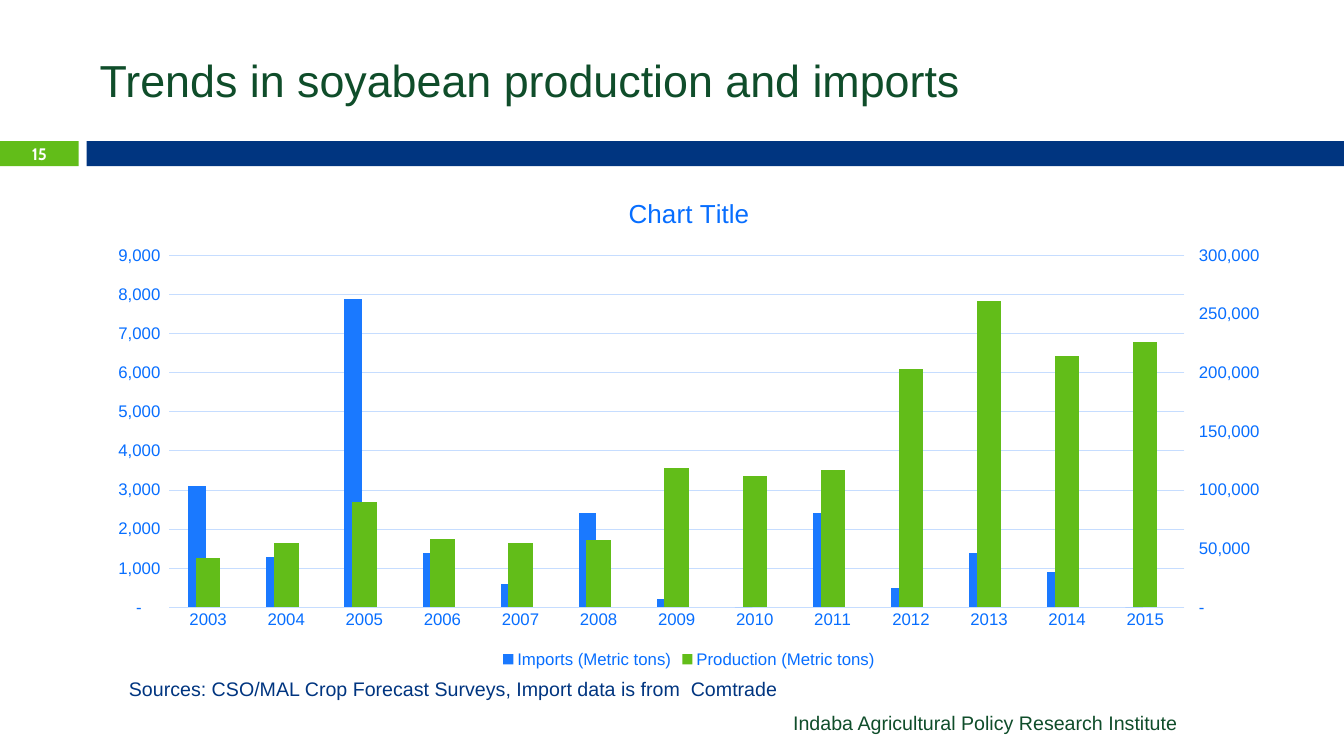
from copy import deepcopy
from lxml.etree import SubElement as Sub
from pptx import Presentation
from pptx.chart.data import CategoryChartData as Data
from pptx.dml.color import RGBColor as Rgb
from pptx.enum.chart import XL_CHART_TYPE as Kind, XL_LEGEND_POSITION as Spot, XL_TICK_MARK as Tick
from pptx.enum.shapes import MSO_SHAPE as Form
from pptx.enum.text import MSO_ANCHOR as Anchor, MSO_AUTO_SIZE as Auto, PP_ALIGN as Align
from pptx.oxml.ns import qn
from pptx.util import Inches, Pt

WIDE, HIGH = Inches(13.333), Inches(7.5)
HUES = {"green": "62BD19", "navy": "003580", "forest": "0F4D2A", "white": "FFFFFF",
        "blue": "1A79FF", "label": "076EFF", "grid": "C6DDFF", "sage": "A5AB81"}
YEARS = [str(year) for year in range(2003, 2016)]
SERIES = {
    "Imports (Metric tons)": ("blue", [3100, 1300, 7900, 1400, 600, 2400, 200, 0, 2400, 500, 1400, 900, 0]),
    "Series 2": ("sage", [None] * len(YEARS)),
    "Production (Metric tons)": ("green", [42000, 55000, 90000, 58000, 55000, 57000, 119000,
                                           112000, 117000, 203000, 261000, 214000, 226000]),
}
COUNT = '_(* #,##0_);_(* \\(#,##0\\);_(* "-"??_);_('


def place(x, y, w, h):
    """Turn percentages of the slide into lengths."""
    return [int(side * part / 100) for side, part in zip((WIDE, HIGH, WIDE, HIGH), (x, y, w, h))]


def apply(item, **traits):
    """Set each trait on the item."""
    for name, value in traits.items():
        setattr(item, name, value)


def ink(font, hue, size, face="Arial", bold=False):
    """Style a font."""
    apply(font, name=face, size=Pt(size), bold=bold)
    font.color.rgb = Rgb.from_string(HUES[hue])


def paint(fill, hue):
    """Give a fill one solid colour."""
    fill.solid()
    fill.fore_color.rgb = Rgb.from_string(HUES[hue])


def bar(slide, hue, *area):
    """Draw a plain band."""
    band = slide.shapes.add_shape(Form.RECTANGLE, *place(*area))
    band.shadow.inherit = False
    paint(band.fill, hue)
    band.line.fill.background()


def write(slide, text, area, font, align=Align.LEFT, **frame):
    """Add a line of text."""
    body = slide.shapes.add_textbox(*place(*area)).text_frame
    apply(body, word_wrap=True, **frame)
    line = body.paragraphs[0]
    apply(line, text=text, alignment=align)
    ink(line.runs[0].font, *font)


def rule(line):
    """Style a thin chart line."""
    paint(line.fill, "grid")
    line.width = Pt(0.75)


def split(chart):
    """Move the last series to an axis on the right."""
    plot = chart.element.find(".//" + qn("c:plotArea"))
    left = plot.find(qn("c:barChart"))
    right = deepcopy(left)
    left.remove(left.findall(qn("c:ser"))[-1])
    for item in right.findall(qn("c:ser"))[:-1]:
        right.remove(item)
    left.addnext(right)
    base, scale = plot.find(qn("c:catAx")), plot.find(qn("c:valAx"))
    years, tons = deepcopy(base), deepcopy(scale)
    scale.addnext(tons)
    tons.addnext(years)
    tons.remove(tons.find(qn("c:majorGridlines")))
    codes = {axis.find(qn("c:axId")).get("val"): code
             for axis, code in ((base, "5001"), (scale, "5002"))}
    for part in (right, years, tons):
        for mark in part.findall(qn("c:axId")) + part.findall(qn("c:crossAx")):
            mark.set("val", codes[mark.get("val")])
    years.find(qn("c:delete")).set("val", "1")
    for tag, value in {"axPos": "r", "majorTickMark": "out", "crosses": "max",
                       "majorUnit": "50000", "scaling/c:max": "300000"}.items():
        tons.find("c:" + tag, {"c": qn("c:x")[1:-2]}).set("val", value)


def graph(slide, *area):
    """Draw the columns on two scales."""
    data = Data(number_format="#,##0")
    data.categories = YEARS
    for name, (hue, values) in SERIES.items():
        data.add_series(name, values)
    chart = slide.shapes.add_chart(Kind.COLUMN_CLUSTERED, *place(*area), data).chart
    ink(chart.font, "navy", 10)
    apply(chart, has_title=True, has_legend=True)
    title = chart.chart_title.text_frame
    title.text = "Chart Title"
    ink(title.paragraphs[0].runs[0].font, "label", 18.6)
    apply(chart.legend, position=Spot.BOTTOM, include_in_layout=False)
    plot = chart.plots[0]
    apply(plot, gap_width=219, overlap=-27, vary_by_categories=False)
    for series, (hue, values) in zip(plot.series, SERIES.values()):
        paint(series.format.fill, hue)
    base, scale = chart.category_axis, chart.value_axis
    for axis in (base, scale):
        apply(axis, major_tick_mark=Tick.NONE, minor_tick_mark=Tick.NONE)
    for part in (base.tick_labels, scale.tick_labels, chart.legend):
        ink(part.font, "label", 12)
    rule(base.format.line)
    scale.format.line.fill.background()
    rule(scale.major_gridlines.format.line)
    apply(scale, minimum_scale=0, maximum_scale=9000, major_unit=1000)
    apply(scale.tick_labels, number_format=COUNT, number_format_is_linked=False)
    entry = Sub(chart.element.find(".//" + qn("c:legend")), qn("c:legendEntry"))
    for tag in ("idx", "delete"):
        Sub(entry, qn("c:" + tag), val="1")
    chart.element.find(".//" + qn("c:legendPos")).addnext(entry)
    split(chart)


def main():
    """Build the slide."""
    deck = Presentation()
    apply(deck, slide_width=WIDE, slide_height=HIGH)
    slide = deck.slides.add_slide(deck.slide_layouts[6])
    bar(slide, "green", 0, 18.67, 5.85, 3.33)
    bar(slide, "navy", 6.45, 18.67, 93.55, 3.33)
    write(slide, "Indaba Agricultural Policy Research Institute", (45.83, 93.33, 42.53, 4.53),
          ("forest", 14), Align.RIGHT, auto_size=Auto.SHAPE_TO_FIT_TEXT)
    write(slide, "Trends in soyabean production and imports", (6.68, 3.33, 89.18, 14.4),
          ("forest", 32), vertical_anchor=Anchor.MIDDLE)
    write(slide, "15", (0, 18.53, 5.85, 3.6), ("white", 11.9, "Cabin", True), Align.CENTER,
          vertical_anchor=Anchor.MIDDLE)
    write(slide, "Sources: CSO/MAL Crop Forecast Surveys, Import data is from  Comtrade",
          (8.85, 88.93, 53.85, 4.53), ("navy", 14), auto_size=Auto.SHAPE_TO_FIT_TEXT)
    graph(slide, 6.68, 23.33, 89.18, 65.6)
    deck.save("out.pptx")


if __name__ == "__main__":
    main()
